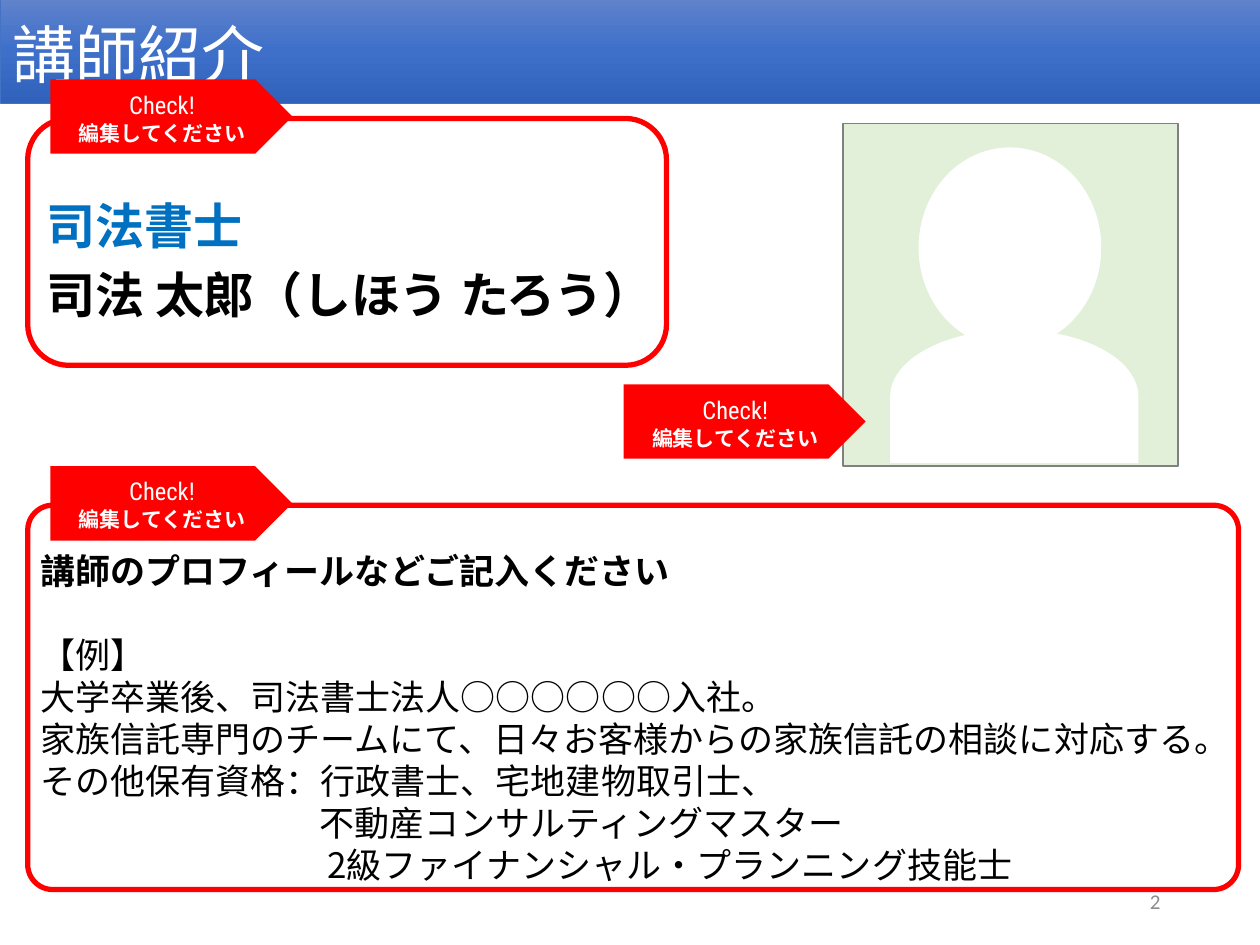
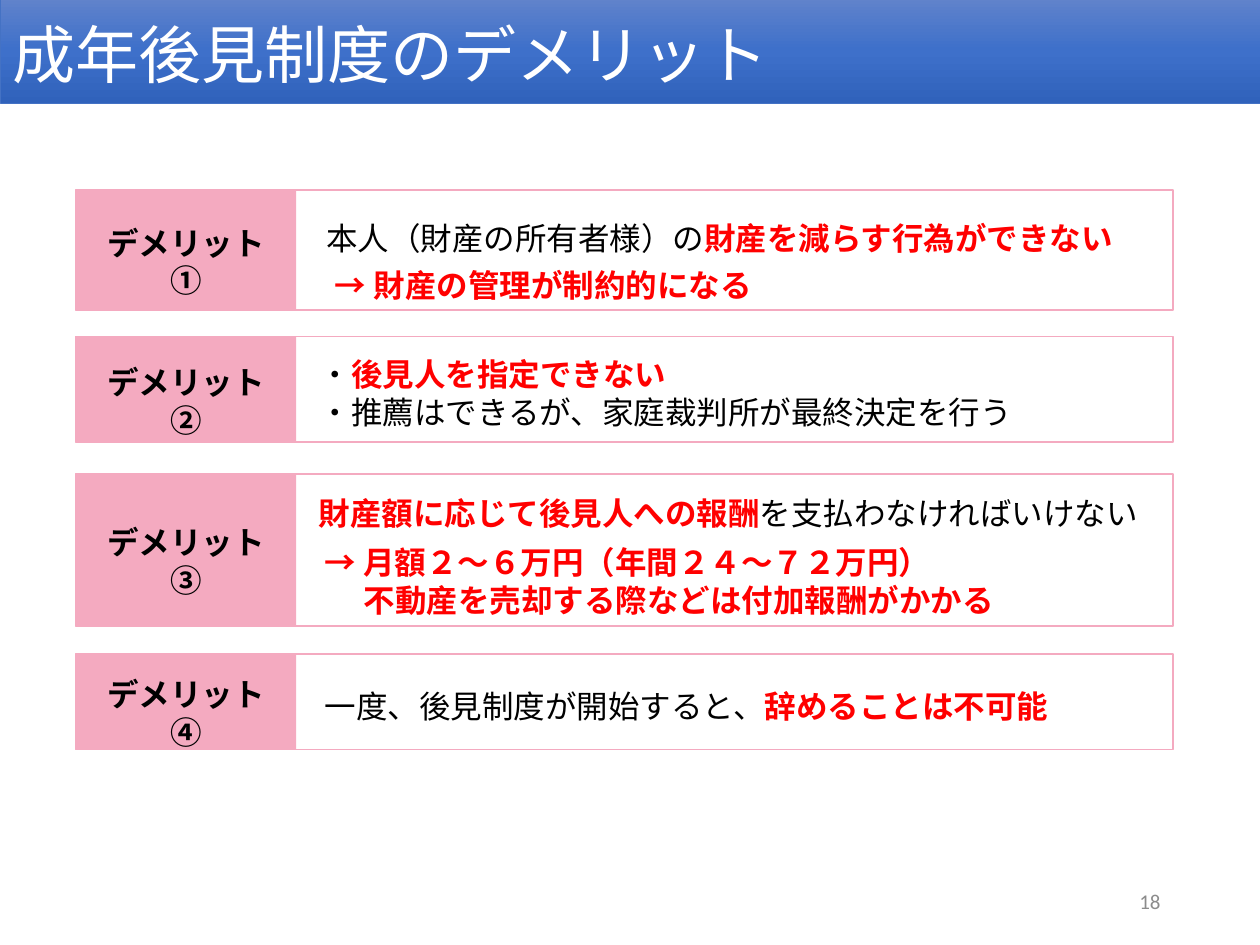
import copy

from pptx import Presentation
from pptx import util as u
from pptx.dml.color import RGBColor
from pptx.enum import shapes, text
from pptx.oxml import ns

Inches, Pt = u.Inches, u.Pt
SHAPE, ALIGN, ANCHOR = shapes.MSO_SHAPE, text.PP_ALIGN, text.MSO_ANCHOR

WHITE = RGBColor(0xFF, 0xFF, 0xFF)
BLACK = RGBColor(0, 0, 0)
RED = RGBColor(0xFF, 0, 0)
BLUE = RGBColor(0, 0x70, 0xC0)
EDGE = RGBColor(0x44, 0x72, 0xC4)
BAND = [RGBColor(0x61, 0x83, 0xCB), RGBColor(0x3E, 0x70, 0xCA), RGBColor(0x30, 0x62, 0xBB)]
PINK = RGBColor(0xF4, 0xAA, 0xC0)
GREEN = RGBColor(0xE2, 0xF0, 0xD9)
GRAY = RGBColor(0x80, 0x80, 0x80)
PALE = RGBColor(0x8C, 0x8C, 0x8C)
SANS, ROBOTO, CALIBRI = "Noto Sans CJK JP", "Roboto Condensed", "Calibri"


# Text helpers
def add_run(para, words, size, color=BLACK, bold=False, face=SANS):
    run = para.add_run()
    run.text = words
    font = run.font
    font.size, font.bold, font.name = Pt(size), bold, face
    font.color.rgb = color
    east = font._element.makeelement(ns.qn("a:ea"), {"typeface": SANS})
    font._element.find(ns.qn("a:latin")).addnext(east)


def set_frame(shape, anchor=ANCHOR.TOP, top=0.05, foot=0.05):
    frame = shape.text_frame
    frame.word_wrap = True
    frame.auto_size = text.MSO_AUTO_SIZE.NONE
    frame.vertical_anchor = anchor
    frame.margin_left = frame.margin_right = Inches(0.1)
    frame.margin_top, frame.margin_bottom = Inches(top), Inches(foot)
    return frame


def add_line(frame, first, pitch, align=ALIGN.LEFT, gap=0, indent=0):
    para = frame.paragraphs[0] if first else frame.add_paragraph()
    para.alignment = align
    para.line_spacing = Pt(pitch)
    para.space_before = Pt(gap)
    if indent:
        props = para._p.get_or_add_pPr()
        props.set("marL", str(Inches(indent)))
        props.set("indent", "0")
    return para


def write(frame, lines, size, align=ALIGN.LEFT, gaps=(), indents=()):
    """Each line is a list of (words, color, bold) runs."""
    gaps, indents = dict(gaps), dict(indents)
    for i, runs in enumerate(lines):
        para = add_line(frame, i == 0, size * 1.2, align, gaps.get(i, 0), indents.get(i, 0))
        for words, color, bold in runs:
            add_run(para, words, size, color, bold)


def add_text(slide, x, y, w, h, anchor=ANCHOR.TOP):
    box = slide.shapes.add_textbox(Inches(x), Inches(y), Inches(w), Inches(h))
    return set_frame(box, anchor)


def add_box(slide, kind, x, y, w, h, fill=None, line=None, width=1):
    shape = slide.shapes.add_shape(kind, Inches(x), Inches(y), Inches(w), Inches(h))
    shape.shadow.inherit = False
    if fill is None:
        shape.fill.background()
    else:
        shape.fill.solid()
        shape.fill.fore_color.rgb = fill
    if line is None:
        shape.line.fill.background()
    else:
        shape.line.color.rgb = line
        shape.line.width = Pt(width)
    return shape


# Shared title band and page number
def add_page(deck, title, number):
    slide = deck.slides.add_slide(deck.slide_layouts[5])
    band = slide.shapes.title
    band.left, band.top, band.width, band.height = map(Inches, (0, -0.02, 10, 0.84))
    band.fill.gradient()
    stops = band._element.spPr.find(".//" + ns.qn("a:gsLst"))
    stops.insert(1, copy.deepcopy(stops[0]))
    for stop, color, place in zip(band.fill.gradient_stops, BAND, (0, 0.5, 1)):
        stop.color.rgb, stop.position = color, place
    band.fill.gradient_angle = 270
    band.line.color.rgb = EDGE
    band.line.width = Pt(0.5)
    write(set_frame(band, ANCHOR.MIDDLE, 0.1), [[(title, WHITE, False)]], 36)

    foot = add_text(slide, 7.06, 6.95, 2.25, 0.4, ANCHOR.MIDDLE)
    add_run(add_line(foot, True, 14.4, ALIGN.RIGHT), str(number), 12, PALE, face=CALIBRI)
    return slide


# Speaker slide parts
def add_tag(slide, x, y):
    tag = add_box(slide, SHAPE.PENTAGON, x, y, 1.92, 0.59, RED)
    frame = set_frame(tag, ANCHOR.MIDDLE, 0.08, 0.04)
    add_run(add_line(frame, True, 15, ALIGN.CENTER), "Check!", 14, WHITE, face=ROBOTO)
    add_run(add_line(frame, False, 15, ALIGN.CENTER), "編集してください", 12, WHITE, True, CALIBRI)


def add_panel(slide, x, y, w, h, round_by):
    panel = add_box(slide, SHAPE.ROUNDED_RECTANGLE, x, y, w, h, line=RED, width=3)
    panel.adjustments[0] = round_by
    add_tag(slide, x + 0.18, y - 0.31)


def add_name(slide, x, y):
    frame = add_text(slide, x + 0.05, y + 0.36, 6.23, 1.52, ANCHOR.MIDDLE)
    write(frame, [[("司法書士", BLUE, True)],
                  [("司法 太郎（しほう たろう）", BLACK, True)]], 28, gaps={1: 6})
    add_panel(slide, x, y, 5.07, 1.96, 0.167)


def add_photo(slide, x, y):
    add_box(slide, SHAPE.RECTANGLE, x, y, 2.66, 2.72, GREEN, GRAY)
    add_box(slide, SHAPE.OVAL, x + 0.6, y + 0.19, 1.45, 1.59, WHITE)
    body = add_box(slide, SHAPE.FLOWCHART_DELAY, x + 0.83, y + 1.18, 1.06, 1.97, WHITE)
    body.rotation = 270
    add_tag(slide, x - 1.74, y + 2.07)


def add_profile(slide, x, y):
    lines = ["講師のプロフィールなどご記入ください",
             "【例】",
             "大学卒業後、司法書士法人○○○○○○入社。",
             "家族信託専門のチームにて、日々お客様からの家族信託の相談に対応する。",
             "その他保有資格：行政書士、宅地建物取引士、",
             "不動産コンサルティングマスター",
             "2級ファイナンシャル・プランニング技能士"]
    frame = add_text(slide, x, y + 0.3, 9.72, 2.8)
    write(frame, [[(words, BLACK, i == 0)] for i, words in enumerate(lines)], 20,
          gaps={1: 24}, indents={5: 2.22, 6: 2.28})
    add_panel(slide, x, y, 9.61, 3.05, 0.065)


def speaker(deck):
    slide = add_page(deck, "講師紹介", 2)
    add_profile(slide, 0.22, 4.01)
    add_name(slide, 0.22, 0.94)
    add_photo(slide, 6.69, 0.98)


# Demerit slide: (top, height, [(dx, dy, lines, indents)])
ROWS = [
    (1.51, 0.95, [
        (1.89, 0.18, [[("本人（財産の所有者様）の", BLACK, False),
                       ("財産を減らす行為ができない", RED, True)]], {}),
        (1.96, 0.55, [[("→ 財産の管理が制約的になる", RED, True)]], {})]),
    (2.67, 0.84, [
        (1.84, 0.1, [[("・", BLACK, False), ("後見人を指定できない", RED, True)],
                     [("・推薦はできるが、家庭裁判所が最終決定を行う", BLACK, False)]], {})]),
    (3.76, 1.21, [
        (1.83, 0.11, [[("財産額に応じて後見人への報酬", RED, True),
                       ("を支払わなければいけない", BLACK, False)]], {}),
        (1.88, 0.5, [[("→ 月額２～６万円（年間２４～７２万円）", RED, True)],
                     [("不動産を売却する際などは付加報酬がかかる", RED, True)]], {1: 0.31})]),
    (5.19, 0.76, [
        (1.88, 0.21, [[("一度、後見制度が開始すると、", BLACK, False),
                       ("辞めることは不可能", RED, True)]], {})]),
]


def add_row(slide, x, y, h, mark, notes):
    label = add_box(slide, SHAPE.RECTANGLE, x, y, 1.75, h, PINK)
    write(set_frame(label, ANCHOR.MIDDLE, 0.18, 0),
          [[("デメリット", BLACK, True)], [(mark, BLACK, True)]], 18, ALIGN.CENTER)
    add_box(slide, SHAPE.RECTANGLE, x, y, 8.71, h, line=PINK)
    for dx, dy, lines, indents in notes:
        frame = add_text(slide, x + dx, y + dy, 7.3, 0.1 + 0.3 * len(lines))
        write(frame, lines, 18, indents=indents)


def demerits(deck):
    slide = add_page(deck, "成年後見制度のデメリット", 18)
    for mark, (y, h, notes) in zip("①②③④", ROWS):
        add_row(slide, 0.6, y, h, mark, notes)


def main():
    deck = Presentation()
    deck.slide_width, deck.slide_height = Inches(10), Inches(7.5)
    speaker(deck)
    demerits(deck)
    deck.save("out.pptx")


if __name__ == "__main__":
    main()
